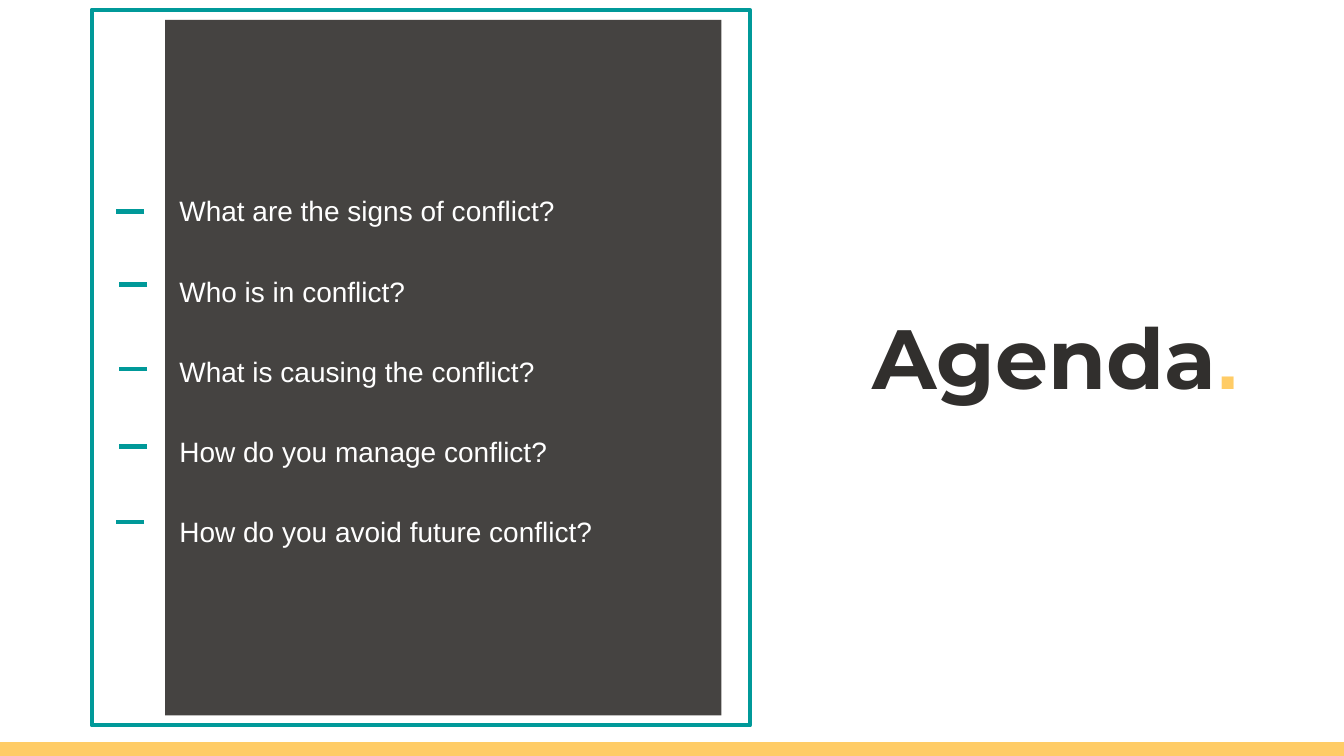
"""Build an agenda slide with five questions in a framed dark panel."""
from lxml import etree
from pptx import Presentation
from pptx import util as u
from pptx.dml.color import RGBColor
from pptx.enum import shapes, text
from pptx.oxml.ns import qn

TEAL, YELLOW, DARK, WHITE = "009999", "FFCC66", "312F2D", "FFFFFF"


def rect(x, y, w, h, fill=None, line=None):
    sp = s.shapes.add_shape(shapes.MSO_SHAPE.RECTANGLE, u.Cm(x), u.Cm(y), u.Cm(w), u.Cm(h))
    sp.shadow.inherit = False
    if fill:
        sp.fill.solid()
        sp.fill.fore_color.rgb = RGBColor.from_string(fill)
    else:
        sp.fill.background()
    if line:
        sp.line.color.rgb = RGBColor.from_string(line)
        sp.line.width = u.Pt(3)
    else:
        sp.line.fill.background()
    return sp


def add_run(p, words, size, color, font="Arial", bold=False):
    r = p.add_run()
    r.text = words
    r.font.size = u.Pt(size)
    r.font.name = font
    r.font.bold = bold
    r.font.color.rgb = RGBColor.from_string(color)


prs = Presentation()
prs.slide_width, prs.slide_height = u.Cm(33.87), u.Cm(19.05)
s = prs.slides.add_slide(prs.slide_layouts[6])

rect(0, 18.7, 33.87, 0.35, fill=YELLOW)

title = s.shapes.add_textbox(u.Cm(21.74), u.Cm(7.57), u.Cm(15.7), u.Cm(2.82))
tf = title.text_frame
tf.word_wrap = True
p = tf.paragraphs[0]
add_run(p, "Agenda", 60, DARK, font="Montserrat", bold=True)
add_run(p, ".", 60, YELLOW, bold=True)

panel = rect(4.16, 0.5, 14.02, 17.53, fill=DARK)
color = panel.fill._xPr.find(qn("a:solidFill"))[0]
etree.SubElement(color, qn("a:alpha"), val="90000")

questions = [
    "What are the signs of conflict?",
    "Who is in conflict?",
    "What is causing the conflict?",
    "How do you manage conflict?",
    "How do you avoid future conflict?",
]
box = s.shapes.add_textbox(u.Cm(4.27), u.Cm(4.72), u.Cm(16.59), u.Cm(9.09))
tf = box.text_frame
tf.word_wrap = True
tf.vertical_anchor = text.MSO_ANCHOR.TOP
for i, question in enumerate(questions):
    p = tf.paragraphs[0] if i == 0 else tf.add_paragraph()
    p.line_spacing = 1.05
    p.space_after = u.Pt(32)
    add_run(p, question, 20, WHITE)

rect(2.31, 0.25, 16.59, 18.03, line=TEAL)

for x, y in [(2.92, 5.33), (3, 7.17), (3, 9.3), (3, 11.25), (2.92, 13.15)]:
    dash = s.shapes.add_connector(
        shapes.MSO_CONNECTOR.STRAIGHT, u.Cm(x + 0.71), u.Cm(y), u.Cm(x), u.Cm(y))
    dash.line.color.rgb = RGBColor.from_string(TEAL)
    dash.line.width = u.Pt(3)
    etree.SubElement(dash.line._get_or_add_ln().getparent(), qn("a:effectLst"))

prs.save("out.pptx")
